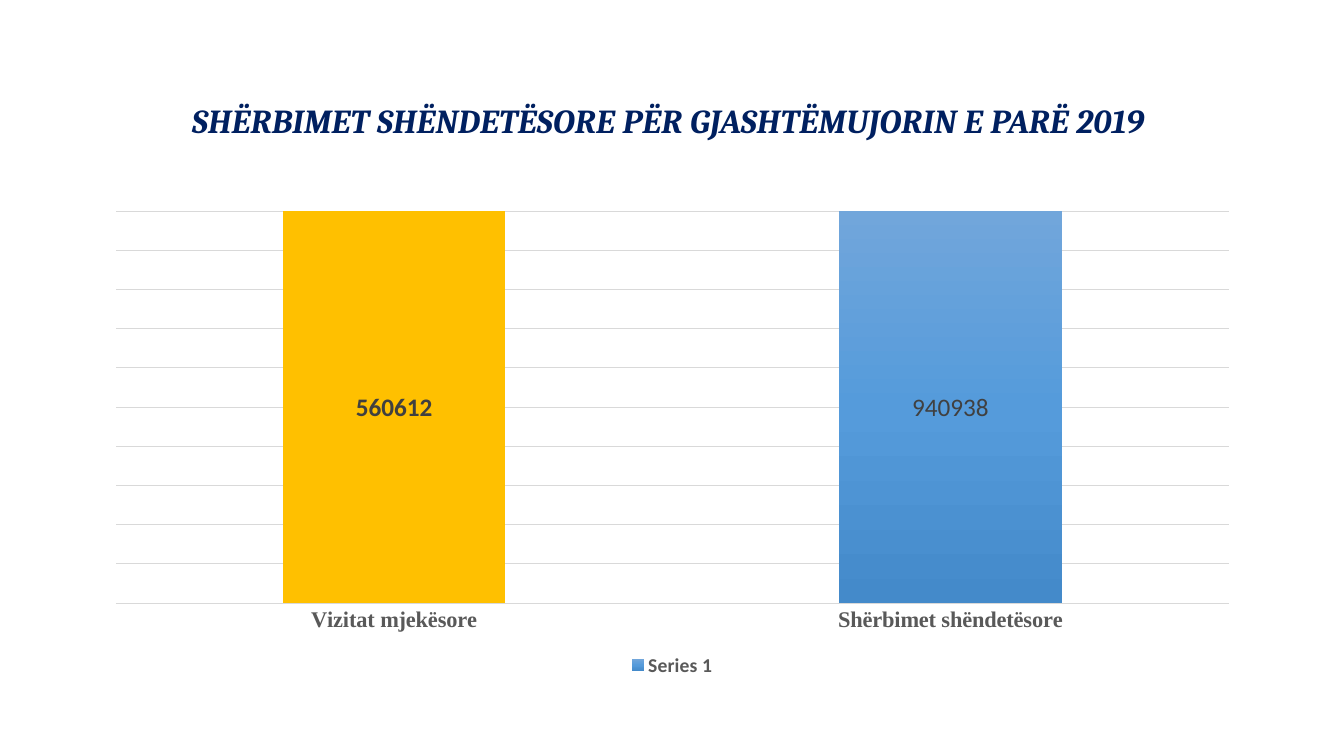
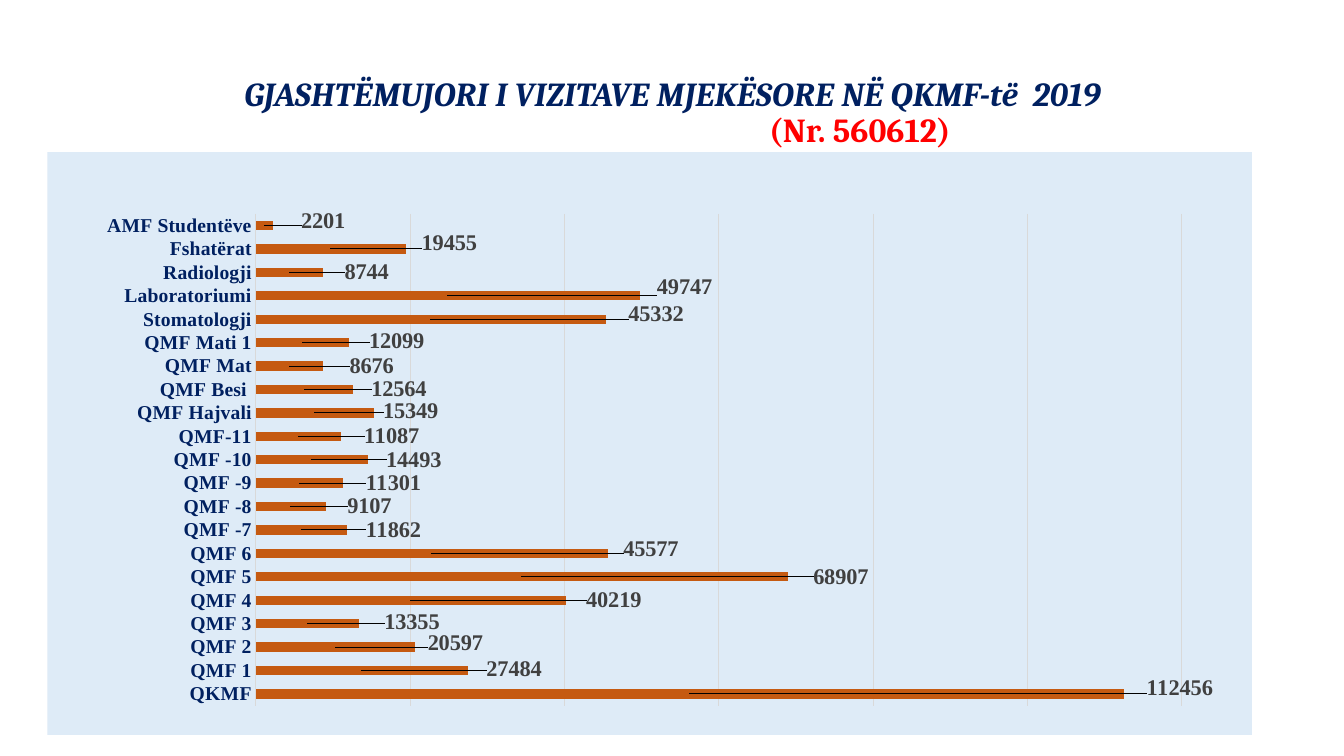
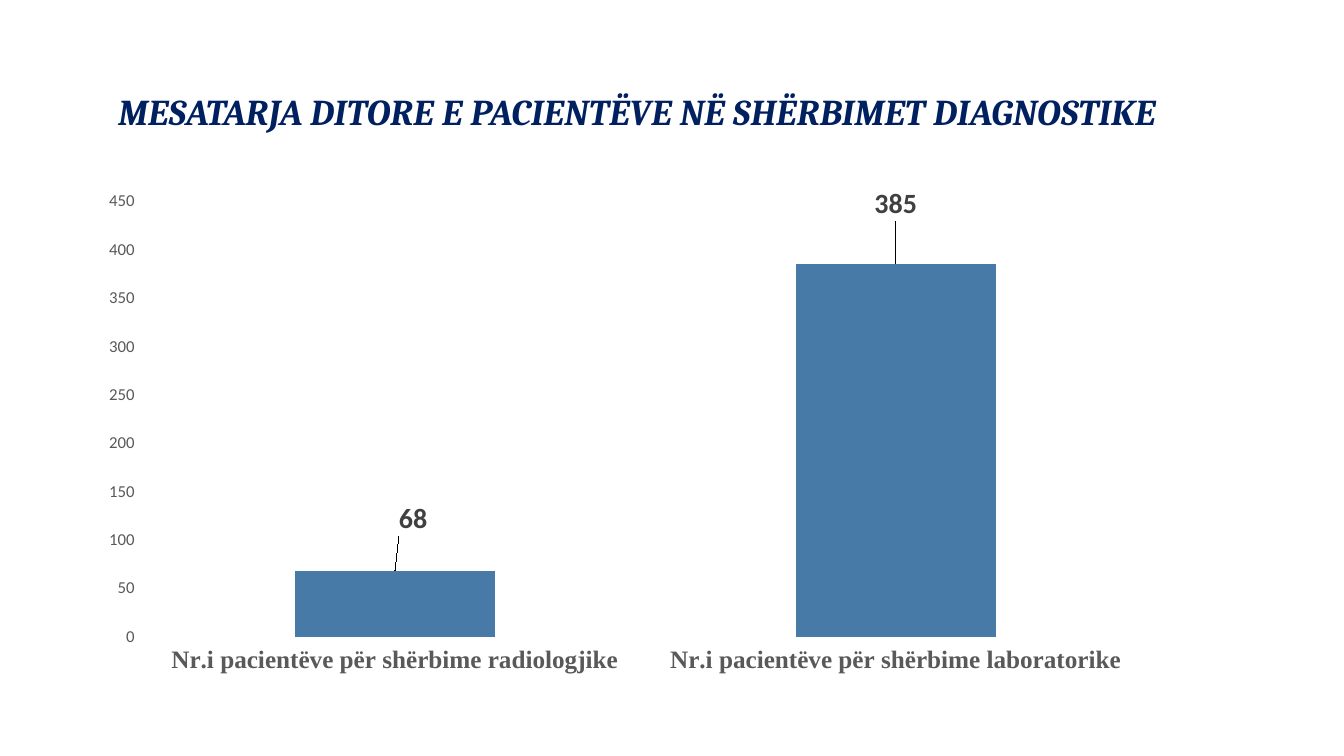
"""Build three chart slides on medical services in the first half of 2019."""

import copy
import dataclasses

import lxml.etree
import pptx
import pptx.chart.data
import pptx.dml.color
import pptx.enum.chart
import pptx.enum.text
import pptx.oxml.ns
import pptx.util

Pt = pptx.util.Pt
qn = pptx.oxml.ns.qn
ChartType = pptx.enum.chart.XL_CHART_TYPE
LabelPosition = pptx.enum.chart.XL_LABEL_POSITION
TickMark = pptx.enum.chart.XL_TICK_MARK
Align = pptx.enum.text.PP_ALIGN


@dataclasses.dataclass(frozen=True)
class Theme:
    """Colours, fonts and type sizes of the deck."""

    navy: str = "002060"
    red: str = "FF0000"
    grey: str = "595959"
    dark: str = "404040"
    rule: str = "D9D9D9"
    gold: str = "FFC000"
    rust: str = "C55A11"
    steel: str = "487AA8"
    panel: str = "DEEBF7"
    blues: tuple = ("71A6DB", "559BDB", "448ACA")
    title_font: str = "Cambria"
    body_font: str = "Calibri"
    serif_font: str = "Times New Roman"
    axis_size: int = 12
    small_size: int = 14
    label_size: int = 16
    large_size: int = 18
    figure_size: int = 20
    title_size: int = 24
    wide_title_size: int = 26


THEME = Theme()
TITLE_BOX = (66.24, 28.8, 828, 104.4)

VISITS = {
    "QKMF": (112456, 40, -4),
    "QMF 1": (27484, 33, -1),
    "QMF 2": (20597, 29, -3),
    "QMF 3": (13355, 38, -1),
    "QMF 4": (40219, 34, 0),
    "QMF 5": (68907, 38, 0),
    "QMF 6": (45577, 31, -3),
    "QMF -7": (11862, 33, 0),
    "QMF -8": (9107, 31, 0),
    "QMF -9": (11301, 36, 0),
    "QMF -10": (14493, 33, 0),
    "QMF-11": (11087, 36, 0),
    "QMF Hajvali": (15349, 26, -1),
    "QMF Besi ": (12564, 33, 0),
    "QMF Mat": (8676, 35, 0),
    "QMF Mati 1": (12099, 34, -1),
    "Stomatologji": (45332, 36, -4),
    "Laboratoriumi": (49747, 32, -6),
    "Radiologji": (8744, 31, 0),
    "Fshatërat": (19455, 31, -4),
    "AMF Studentëve": (2201, 36, -3),
}


def rgb(color):
    """Return a colour object for a hex string."""
    return pptx.dml.color.RGBColor.from_string(color)


def format_font(font, name, size, color, **values):
    """Set a font from its name, size, colour and other attributes."""
    values = {"name": name, "size": Pt(size), **values}
    for key, value in values.items():
        setattr(font, key, value)
    font.color.rgb = rgb(color)


def format_line(line):
    """Draw a thin line in the rule colour."""
    line.color.rgb = rgb(THEME.rule)
    line.width = Pt(0.75)


def fill_solid(target, color):
    """Fill a chart element with one colour."""
    target.format.fill.solid()
    target.format.fill.fore_color.rgb = rgb(color)


def fill_gradient(series, colors):
    """Fill a series from top to bottom with evenly spaced colours."""
    fill = series.format.fill
    fill.gradient()
    fill.gradient_angle = 270
    stop_list = next(series._element.iter(qn("a:gsLst")))
    for _ in colors[2:]:
        stop_list.insert(1, copy.deepcopy(stop_list[0]))
    for index, (stop, color) in enumerate(zip(fill.gradient_stops, colors)):
        stop.color.rgb = rgb(color)
        stop.position = index / (len(colors) - 1)


def add_title(page, lines, size=THEME.title_size, drop=0):
    """Add the title box; each line is text, alignment, indent, colour and slant."""
    box = page.shapes.add_textbox(*map(Pt, TITLE_BOX))
    frame = box.text_frame
    values = {
        "word_wrap": True,
        "vertical_anchor": pptx.enum.text.MSO_ANCHOR.MIDDLE,
        "margin_top": Pt(3.6 + drop),
    }
    for key, value in values.items():
        setattr(frame, key, value)
    for index, (text, align, indent, color, italic) in enumerate(lines):
        para = frame.add_paragraph() if index else frame.paragraphs[0]
        para.alignment = align
        para.line_spacing = 0.9
        para._p.get_or_add_pPr().set("marL", str(Pt(indent)))
        span = para.add_run()
        span.text = text
        format_font(span.font, THEME.title_font, size, color, bold=True, italic=italic)


def add_bar_chart(page, kind, area, categories, values):
    """Add a one-series bar chart and return it."""
    chart_data = pptx.chart.data.CategoryChartData()
    chart_data.categories = categories
    chart_data.add_series("Series 1", values)
    chart = page.shapes.add_chart(kind, *map(Pt, area), chart_data).chart
    chart.has_title = False
    chart.has_legend = False
    format_font(chart.font, THEME.body_font, THEME.axis_size, "000000")
    plot = chart.plots[0]
    plot.gap_width = 150
    plot.vary_by_categories = False
    return chart


def format_category_axis(chart, size, color, has_line=True):
    """Set the category labels and the axis line, if any."""
    axis = chart.category_axis
    axis.has_major_gridlines = False
    format_font(axis.tick_labels.font, THEME.serif_font, size, color, bold=True)
    if has_line:
        axis.major_tick_mark = TickMark.NONE
        format_line(axis.format.line)
    else:
        axis.major_tick_mark = TickMark.OUTSIDE
        axis.format.line.fill.background()


def hide_value_axis(chart):
    """Hide the value axis but keep its gridlines."""
    axis = chart.value_axis
    axis.visible = False
    axis.has_major_gridlines = True
    format_line(axis.major_gridlines.format.line)


def scale_value_axis(chart, top, step):
    """Run the value axis from zero to the top in equal steps."""
    scale = {"minimum_scale": 0, "maximum_scale": top, "major_unit": step}
    for key, value in scale.items():
        setattr(chart.value_axis, key, value)


def make_layout(**fields):
    """Return a manual layout element holding the given fields."""
    layout = lxml.etree.Element(qn("c:layout"))
    manual = lxml.etree.SubElement(layout, qn("c:manualLayout"))
    for name, value in fields.items():
        lxml.etree.SubElement(manual, qn(f"c:{name}"), val=str(value))
    return layout


def place_plot(chart, area, plot_area):
    """Place the inner plot area, given in points inside the chart."""
    left, top, width, height = plot_area
    layout = make_layout(
        layoutTarget="inner", xMode="edge", yMode="edge",
        x=left / area[2], y=top / area[3], w=width / area[2], h=height / area[3],
    )
    element = next(chart._chartSpace.iter(qn("c:plotArea")))
    for old_layout in element.findall(qn("c:layout")):
        element.remove(old_layout)
    element.insert(0, layout)


def fill_panel(chart, color):
    """Fill the chart background with one colour and no border."""
    properties = lxml.etree.Element(qn("c:spPr"))
    fill = lxml.etree.SubElement(properties, qn("a:solidFill"))
    lxml.etree.SubElement(fill, qn("a:srgbClr"), val=color)
    line = lxml.etree.SubElement(properties, qn("a:ln"))
    lxml.etree.SubElement(line, qn("a:noFill"))
    chart._chartSpace.find(qn("c:chart")).addnext(properties)


def remove_leader_lines(labels):
    """Switch off the lines between moved labels and their bars."""
    element = labels._element
    for old_switch in element.findall(qn("c:showLeaderLines")):
        element.remove(old_switch)
    namespace = "http://schemas.microsoft.com/office/drawing/2012/chart"
    extensions = lxml.etree.SubElement(element, qn("c:extLst"))
    extension = lxml.etree.SubElement(
        extensions, qn("c:ext"), nsmap={"c15": namespace},
        uri="{CE6537A1-D6FC-4f65-9D91-7224C49458BB}",
    )
    lxml.etree.SubElement(extension, f"{{{namespace}}}showLeaderLines", val="0")


def add_labels(chart, name, size, position):
    """Show the values as bold data labels."""
    labels = chart.plots[0].series[0].data_labels
    labels.show_value = True
    labels.position = position
    format_font(labels.font, name, size, THEME.dark, bold=True)
    remove_leader_lines(labels)


def format_point_label(point, name, size, position, bold):
    """Format the data label of one point and return its element."""
    label = point.data_label
    format_font(label.font, name, size, THEME.dark, bold=bold)
    label.position = position
    return label._get_or_add_dLbl()


def shift_labels(chart, area, shifts, name, size, position):
    """Move each data label from its position by an offset in points."""
    add_labels(chart, name, size, position)
    series = chart.plots[0].series[0]
    for index, (across, down) in enumerate(shifts):
        element = format_point_label(series.points[index], name, size, position, True)
        layout = make_layout(x=across / area[2], y=down / area[3])
        element.find(qn("c:idx")).addnext(layout)


def add_services_page(page):
    """Compare medical visits with health services."""
    title = "SHËRBIMET SHËNDETËSORE PËR GJASHTËMUJORIN E PARË 2019"
    add_title(page, [(title, Align.LEFT, 63.7, THEME.navy, True)], drop=13)
    chart = add_bar_chart(
        page, ChartType.COLUMN_STACKED_100, (66.24, 144, 828, 342.72),
        ["Vizitat mjekësore", "Shërbimet shëndetësore"], [560612, 940938],
    )
    chart.plots[0].overlap = 100
    format_category_axis(chart, THEME.label_size, THEME.grey)
    hide_value_axis(chart)
    series = chart.plots[0].series[0]
    fill_gradient(series, THEME.blues)
    fill_solid(series.points[0], THEME.gold)
    label_format = (THEME.body_font, THEME.large_size, LabelPosition.CENTER)
    add_labels(chart, *label_format)
    format_point_label(series.points[1], *label_format, False)
    chart.has_legend = True
    chart.legend.position = pptx.enum.chart.XL_LEGEND_POSITION.BOTTOM
    chart.legend.include_in_layout = False
    format_font(chart.legend.font, THEME.body_font, THEME.small_size, THEME.grey, bold=True)


def add_visits_page(page):
    """Show the visits of each centre."""
    add_title(page, [
        ("GJASHTËMUJORI I VIZITAVE MJEKËSORE NË QKMF-të  2019",
         Align.CENTER, 0, THEME.navy, True),
        ("(Nr. 560612)", Align.CENTER, 268, THEME.red, False),
    ])
    area = (33.84, 108.72, 860.4, 416.16)
    plot_area = (148.85, 44.11, 661.65, 351.24)
    axis_top = 120000
    values = [value for value, _, _ in VISITS.values()]
    chart = add_bar_chart(page, ChartType.BAR_STACKED, area, list(VISITS), values)
    chart.plots[0].overlap = 100
    format_category_axis(chart, THEME.small_size, THEME.navy)
    hide_value_axis(chart)
    scale_value_axis(chart, axis_top, 20000)
    fill_panel(chart, THEME.panel)
    place_plot(chart, area, plot_area)
    fill_solid(chart.plots[0].series[0], THEME.rust)
    shifts = [
        (value / axis_top * plot_area[2] / 2 + gap, down)
        for value, gap, down in VISITS.values()
    ]
    shift_labels(
        chart, area, shifts, THEME.serif_font, THEME.label_size, LabelPosition.CENTER
    )


def add_diagnostics_page(page):
    """Show the daily average of patients in diagnostic services."""
    title = "MESATARJA DITORE E PACIENTËVE NË SHËRBIMET DIAGNOSTIKE"
    add_title(page, [(title, Align.LEFT, 11, THEME.navy, True)], THEME.wide_title_size)
    area = (77.76, 133.2, 756.72, 349.2)
    categories = [
        f"Nr.i pacientëve për shërbime {service}"
        for service in ("radiologjike", "laboratorike")
    ]
    chart = add_bar_chart(page, ChartType.COLUMN_CLUSTERED, area, categories, [68, 385])
    format_category_axis(chart, THEME.large_size, THEME.grey, has_line=False)
    axis = chart.value_axis
    axis.has_major_gridlines = False
    axis.format.line.fill.background()
    scale_value_axis(chart, 450, 50)
    format_font(axis.tick_labels.font, THEME.body_font, THEME.axis_size, THEME.grey)
    place_plot(chart, area, (25.5, 9, 715.5, 312.5))
    fill_solid(chart.plots[0].series[0], THEME.steel)
    shift_labels(
        chart, area, [(13, -22), (0, -28)],
        THEME.body_font, THEME.figure_size, LabelPosition.OUTSIDE_END,
    )


def main():
    """Build the deck and save it."""
    deck = pptx.Presentation()
    deck.slide_width = Pt(960)
    deck.slide_height = Pt(540)
    for build_page in (add_services_page, add_visits_page, add_diagnostics_page):
        build_page(deck.slides.add_slide(deck.slide_layouts[6]))
    deck.save("out.pptx")


if __name__ == "__main__":
    main()
